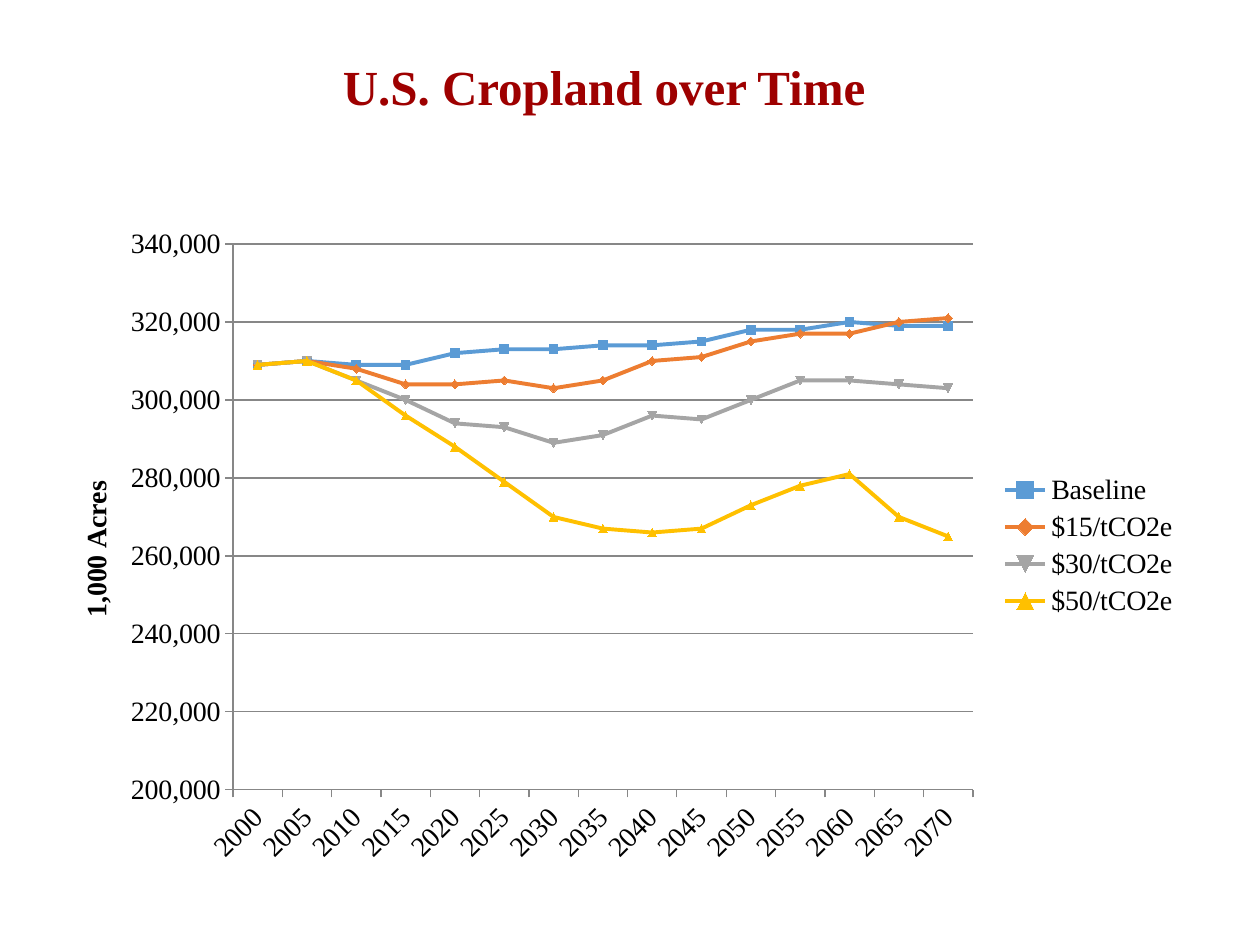
from dataclasses import dataclass

from lxml import etree
from pptx import Presentation
from pptx.chart.data import CategoryChartData
from pptx.dml.color import RGBColor
from pptx.enum.chart import XL_CHART_TYPE, XL_LEGEND_POSITION, XL_TICK_MARK
from pptx.enum.text import MSO_ANCHOR, PP_ALIGN
from pptx.oxml import parse_xml
from pptx.oxml.ns import nsdecls, qn
from pptx.util import Emu, Pt

LINE = XL_CHART_TYPE.LINE_MARKERS
RIGHT = XL_LEGEND_POSITION.RIGHT
OUT = XL_TICK_MARK.OUTSIDE
CENTER, MIDDLE = PP_ALIGN.CENTER, MSO_ANCHOR.MIDDLE

TITLE = "U.S. Cropland over Time"
UNIT = "1,000 Acres"
YEARS = [str(year) for year in range(2000, 2071, 5)]
# Each value is in thousands of the axis unit.
ACRES = {
    "Baseline": [309, 310, 309, 309, 312, 313, 313, 314,
                 314, 315, 318, 318, 320, 319, 319],
    "$15/tCO2e": [309, 310, 308, 304, 304, 305, 303, 305,
                  310, 311, 315, 317, 317, 320, 321],
    "$30/tCO2e": [309, 310, 305, 300, 294, 293, 289, 291,
                  296, 295, 300, 305, 305, 304, 303],
    "$50/tCO2e": [309, 310, 305, 296, 288, 279, 270, 267,
                  266, 267, 273, 278, 281, 270, 265],
}

# Left, top, width, height in px
SLIDE = (0, 0, 1260, 945)
HEAD = (37, 11, 1134, 158)
CHART = (37, 215, 1155, 661)
PLOT = (233, 244, 740, 546)
UNIT_AT = (73, 476)


@dataclass(frozen=True)
class Theme:
    font: str = "Times New Roman"
    title: str = "9E0000"
    text: str = "000000"
    grid: str = "878787"
    lines: tuple = ("5B9BD5", "ED7D31", "A5A5A5", "FFC000")
    title_size: int = 28
    size: int = 16


THEME = Theme()


def emu(*sizes):
    return [Emu(size * 7258) for size in sizes]


def rgb(code):
    return RGBColor.from_string(code)


def style(font, size, color, bold=False):
    font.name, font.size, font.bold = THEME.font, Pt(size), bold
    font.color.rgb = rgb(color)


def stroke(line, color, width):
    line.color.rgb = rgb(color)
    line.width = Pt(width)


def layout(box, inner=False):
    """Return a manual chart layout for a px box or a px point."""
    left, top, wide, high = CHART
    parts = [(box[0] - left) / wide, (box[1] - top) / high]
    parts += [size / whole for size, whole in zip(box[2:], (wide, high))]
    node = parse_xml(f"<c:layout {nsdecls('c')}><c:manualLayout/></c:layout>")
    tags = [("layoutTarget", "inner")] if inner else []
    tags += [("xMode", "edge"), ("yMode", "edge")]
    tags += [(tag, f"{part:.4f}") for tag, part in zip("xywh", parts)]
    for tag, val in tags:
        etree.SubElement(node[0], qn(f"c:{tag}"), val=val)
    return node


def place(owner, node, after=None):
    for old in owner.findall(qn("c:layout")):
        owner.remove(old)
    if after is None:
        owner.insert(0, node)
    else:
        after.addnext(node)


def add_title(slide):
    frame = slide.shapes.add_textbox(*emu(*HEAD)).text_frame
    frame.word_wrap = True
    frame.vertical_anchor = MIDDLE
    para = frame.paragraphs[0]
    para.text = TITLE
    para.alignment = CENTER
    para.line_spacing = 0.9
    style(para.font, THEME.title_size, THEME.title, True)


def set_axes(chart):
    years, acres = chart.category_axis, chart.value_axis
    for axis in (years, acres):
        axis.major_tick_mark = OUT
        stroke(axis.format.line, THEME.grid, 0.75)
        style(axis.tick_labels.font, THEME.size, THEME.text)
    years._element.find(qn("c:txPr")).find(qn("a:bodyPr")).set("rot", "-2700000")

    acres.minimum_scale, acres.maximum_scale = 200000, 340000
    acres.major_unit = 20000
    acres.tick_labels.number_format = "#,##0"
    acres.tick_labels.number_format_is_linked = False
    acres.has_major_gridlines = True
    stroke(acres.major_gridlines.format.line, THEME.grid, 0.75)

    title = acres.axis_title
    frame = title.text_frame
    frame.text = UNIT
    style(frame.paragraphs[0].font, THEME.size, THEME.text, True)
    frame._txBody.find(qn("a:bodyPr")).set("rot", "-5400000")
    node = title._element
    place(node, layout(UNIT_AT), node.find(qn("c:tx")))


def add_chart(slide):
    data = CategoryChartData(number_format="#,##0")
    data.categories = YEARS
    for name, vals in ACRES.items():
        data.add_series(name, [val * 1000 for val in vals])
    chart = slide.shapes.add_chart(LINE, *emu(*CHART), data).chart
    chart.has_title = False
    style(chart.font, THEME.size, THEME.text)
    chart.has_legend = True
    chart.legend.position = RIGHT
    chart.legend.include_in_layout = False
    style(chart.legend.font, THEME.size, THEME.text)

    plot = chart.plots[0]
    plot.vary_by_categories = False
    for series, color in zip(plot.series, THEME.lines):
        series.smooth = False
        stroke(series.format.line, color, 2.25)
        mark = series.marker
        mark.size = 5
        mark.format.fill.solid()
        mark.format.fill.fore_color.rgb = rgb(color)
        stroke(mark.format.line, color, 0.75)

    set_axes(chart)
    place(chart._chartSpace.chart.plotArea, layout(PLOT, inner=True))


def main():
    deck = Presentation()
    deck.slide_width, deck.slide_height = emu(*SLIDE[2:])
    slide = deck.slides.add_slide(deck.slide_layouts[6])
    add_title(slide)
    add_chart(slide)
    deck.save("out.pptx")


if __name__ == "__main__":
    main()
